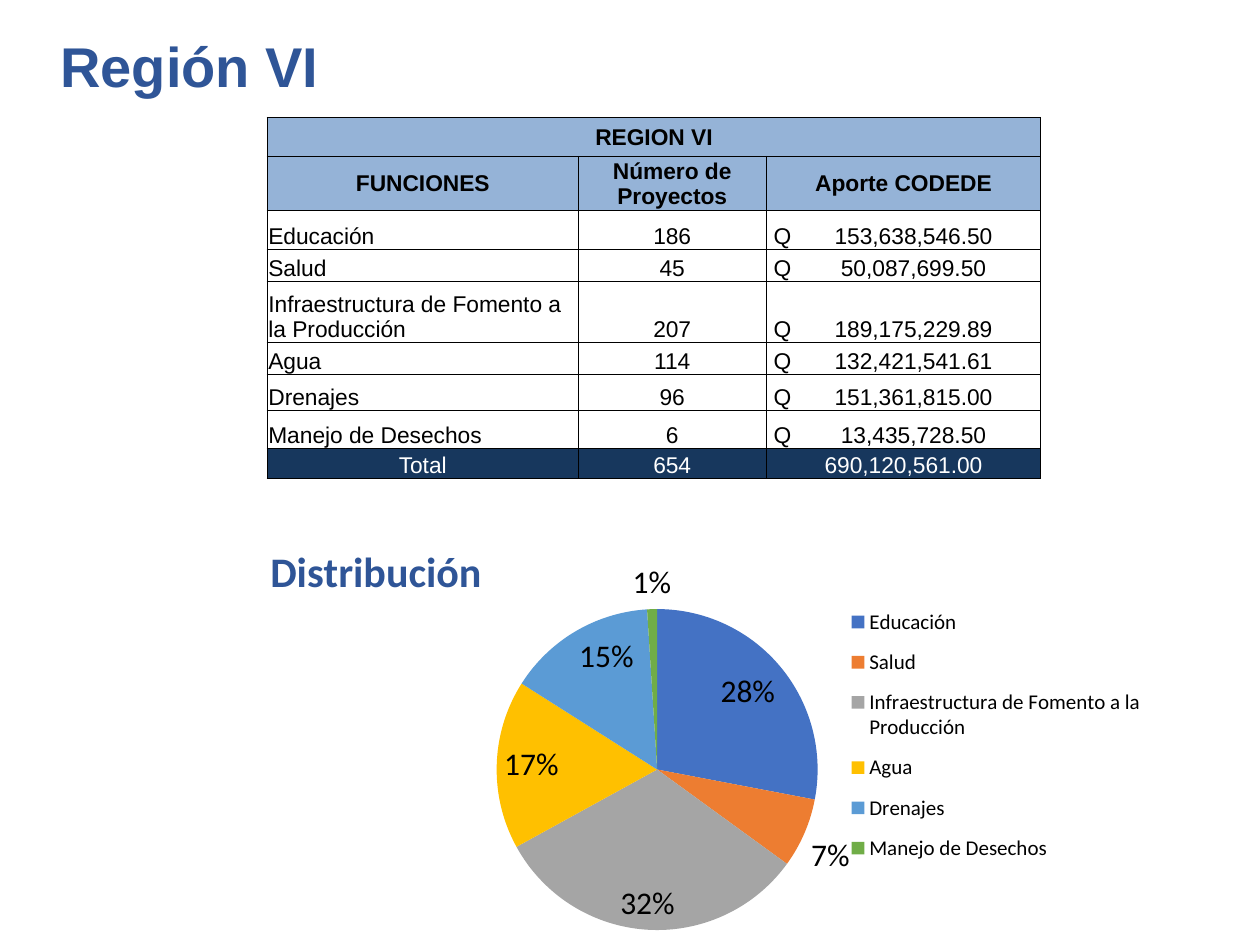
from dataclasses import dataclass

from lxml.etree import SubElement
from pptx import Presentation
from pptx.chart.data import CategoryChartData
from pptx.dml.color import RGBColor
from pptx.enum.chart import XL_CHART_TYPE, XL_LABEL_POSITION as LabelPosition, XL_LEGEND_POSITION
from pptx.enum.text import MSO_ANCHOR as Anchor, PP_ALIGN as Align
from pptx.oxml import parse_xml
from pptx.oxml.ns import nsdecls, qn
from pptx.util import Inches, Pt


@dataclass(frozen=True)
class Theme:
    heading: str = "2F5597"
    header_fill: str = "95B3D7"
    total_fill: str = "17375D"
    black: str = "000000"
    white: str = "FFFFFF"
    slices: tuple = ("4472C4", "ED7D31", "A5A5A5", "FFC000", "5B9BD5", "70AD47")
    text_font: str = "Arial"
    chart_font: str = "Calibri"
    title_size: int = 32
    table_size: int = 13
    chart_title_size: int = 24
    label_size: int = 18
    legend_size: int = 12


THEME = Theme()
COLUMN_WIDTHS = (2.47, 1.49, 2.18)
ROW_HEIGHTS = (0.31, 0.43, 0.31, 0.25, 0.49, 0.25, 0.29, 0.3, 0.24)
HEADERS = ("FUNCIONES", "Número de Proyectos", "Aporte CODEDE")
# Function, number of projects, contribution, share in percent
FUNCTIONS = (
    ("Educación", "186", "153,638,546.50", 28),
    ("Salud", "45", "50,087,699.50", 7),
    ("Infraestructura de Fomento a la Producción", "207", "189,175,229.89", 32),
    ("Agua", "114", "132,421,541.61", 17),
    ("Drenajes", "96", "151,361,815.00", 15),
    ("Manejo de Desechos", "6", "13,435,728.50", 1),
)
TOTALS = ("Total", "654", "690,120,561.00")
OUTSIDE_LABEL_BELOW = 10


def style_font(font, name, size, color, bold=False):
    font.name = name
    font.size = Pt(size)
    font.bold = bold
    font.color.rgb = RGBColor.from_string(color)


def add_title(slide, text):
    box = slide.shapes.add_textbox(Inches(-0.31), Inches(0.2), Inches(3.63), Inches(0.58))
    box.text_frame.word_wrap = True
    paragraph = box.text_frame.paragraphs[0]
    paragraph.text = text
    paragraph.alignment = Align.CENTER
    style_font(paragraph.font, THEME.text_font, THEME.title_size, THEME.heading, True)


def add_borders(cell):
    properties = cell._tc.get_or_add_tcPr()
    for index, side in enumerate(("lnL", "lnR", "lnT", "lnB")):
        properties.insert(index, parse_xml(
            f'<a:{side} {nsdecls("a")} w="{Pt(0.5)}"><a:solidFill>'
            f'<a:srgbClr val="{THEME.black}"/></a:solidFill></a:{side}>'))


def add_center_tab(paragraph, position):
    tabs = SubElement(paragraph._p.get_or_add_pPr(), qn("a:tabLst"))
    SubElement(tabs, qn("a:tab"), pos=str(Inches(position)), algn="ctr")


def fill_cell(cell, text, fill=None, color=THEME.black, bold=False,
              align=Align.CENTER, anchor=Anchor.BOTTOM):
    cell.margin_left = cell.margin_right = cell.margin_top = Inches(0.01)
    cell.margin_bottom = 0
    cell.vertical_anchor = anchor
    if fill:
        cell.fill.solid()
        cell.fill.fore_color.rgb = RGBColor.from_string(fill)
    else:
        cell.fill.background()
    add_borders(cell)
    paragraph = cell.text_frame.paragraphs[0]
    paragraph.text = text
    paragraph.alignment = align
    if "\t" in text:
        cell.margin_left = Inches(0.06)
        add_center_tab(paragraph, 1.11)
    style_font(paragraph.font, THEME.text_font, THEME.table_size, color, bold)


def add_projects_table(slide):
    frame = slide.shapes.add_table(len(ROW_HEIGHTS), len(COLUMN_WIDTHS), Inches(2.12),
                                   Inches(0.93), Inches(6.14), Inches(2.9))
    table = frame.table
    table.first_row = table.horz_banding = False
    for column, width in zip(table.columns, COLUMN_WIDTHS):
        column.width = Inches(width)
    for row, height in zip(table.rows, ROW_HEIGHTS):
        row.height = Inches(height)

    header = {"fill": THEME.header_fill, "bold": True, "anchor": Anchor.MIDDLE}
    table.cell(0, 0).merge(table.cell(0, 2))
    for column, text in enumerate(("REGION VI", "", "")):
        fill_cell(table.cell(0, column), text, **header)
    for column, text in enumerate(HEADERS):
        fill_cell(table.cell(1, column), text, **header)
    for row, (name, projects, amount, _) in enumerate(FUNCTIONS, start=2):
        fill_cell(table.cell(row, 0), name, align=Align.LEFT)
        fill_cell(table.cell(row, 1), projects)
        fill_cell(table.cell(row, 2), f"Q\t{amount}", align=Align.LEFT)
    for column, text in enumerate(TOTALS):
        fill_cell(table.cell(len(ROW_HEIGHTS) - 1, column), text,
                  fill=THEME.total_fill, color=THEME.white)


def place(element, index, x, y, width=None, height=None):
    """Give a chart part a manual layout, in fractions of the chart area."""
    for old in element.findall(qn("c:layout")):
        element.remove(old)
    layout = parse_xml(f'<c:layout {nsdecls("c")}><c:manualLayout/></c:layout>')
    manual = layout[0]
    if element.tag == qn("c:plotArea"):
        SubElement(manual, qn("c:layoutTarget"), val="inner")
    for tag in ("xMode", "yMode"):
        SubElement(manual, qn(f"c:{tag}"), val="edge")
    for tag, value in (("x", x), ("y", y), ("w", width), ("h", height)):
        if value is not None:
            SubElement(manual, qn(f"c:{tag}"), val=str(value))
    element.insert(index, layout)


def style_slices(series):
    labels = series.data_labels
    labels.show_percentage = True
    labels.position = LabelPosition.INSIDE_END
    style_font(labels.font, THEME.chart_font, THEME.label_size, THEME.black)
    for index, (color, function) in enumerate(zip(THEME.slices, FUNCTIONS)):
        point = series.points[index]
        point.format.fill.solid()
        point.format.fill.fore_color.rgb = RGBColor.from_string(color)
        if function[3] < OUTSIDE_LABEL_BELOW:
            label = point.data_label
            style_font(label.font, THEME.chart_font, THEME.label_size, THEME.black)
            label.position = LabelPosition.OUTSIDE_END
    for tag, shown in (("c:showVal", "0"), ("c:showPercent", "1")):
        for flag in labels._element.iter(qn(tag)):
            flag.set("val", shown)


def add_distribution_chart(slide):
    data = CategoryChartData()
    data.categories = [function[0] for function in FUNCTIONS]
    data.add_series("Distribución", [function[3] for function in FUNCTIONS])
    chart = slide.shapes.add_chart(XL_CHART_TYPE.PIE, Inches(1.82), Inches(3.58),
                                   Inches(8.82), Inches(3.92), data).chart
    style_font(chart.font, THEME.chart_font, THEME.label_size, THEME.black)

    chart.has_title = True
    title = chart.chart_title
    paragraph = title.text_frame.paragraphs[0]
    paragraph.text = "Distribución"
    style_font(paragraph.font, THEME.chart_font, THEME.chart_title_size, THEME.heading, True)
    place(title._element, 1, 0.03, 0.17)

    chart.has_legend = True
    legend = chart.legend
    legend.position = XL_LEGEND_POSITION.RIGHT
    legend.include_in_layout = False
    style_font(legend.font, THEME.chart_font, THEME.legend_size, THEME.black)
    place(legend._element, 1, 0.56, 0.29, 0.26, 0.57)

    plot = chart.plots[0]
    plot.vary_by_categories = True
    style_slices(plot.series[0])
    place(plot._element.getparent(), 0, 0.24, 0.32, 0.29, 0.65)


def main():
    presentation = Presentation()
    presentation.slide_width = Inches(10)
    presentation.slide_height = Inches(7.5)
    slide = presentation.slides.add_slide(presentation.slide_layouts[6])
    add_projects_table(slide)
    add_title(slide, "Región VI")
    add_distribution_chart(slide)
    presentation.save("out.pptx")


if __name__ == "__main__":
    main()
